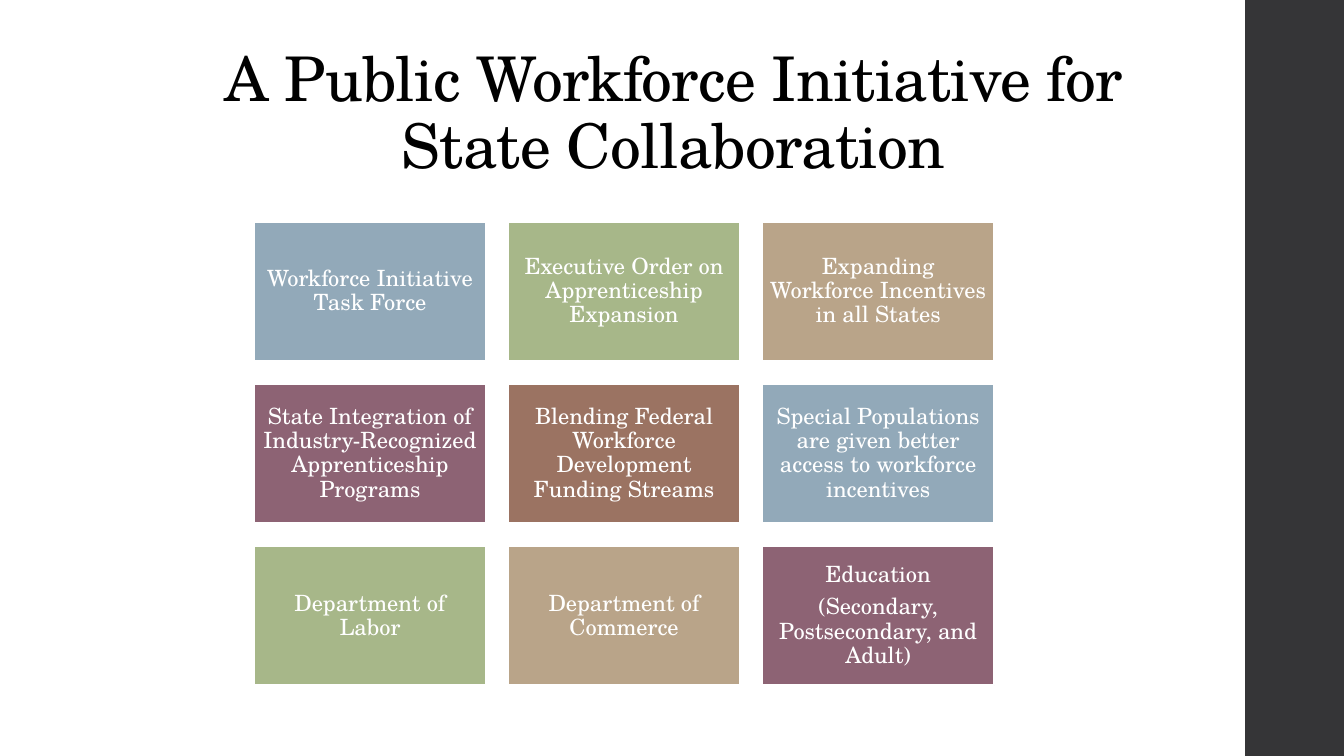
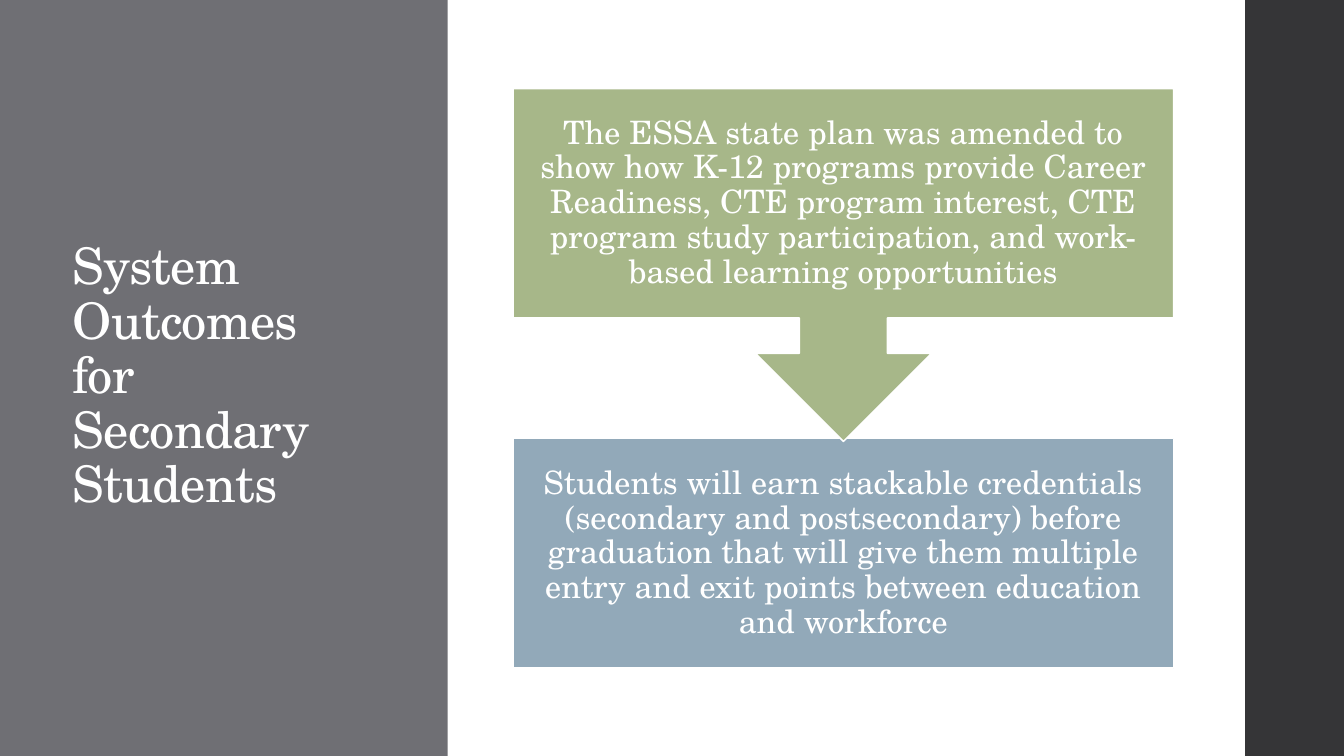
from itertools import cycle

from pptx import Presentation
from pptx.dml.color import RGBColor
from pptx.enum.shapes import MSO_SHAPE as Preset
from pptx.enum.text import MSO_ANCHOR as Anchor, MSO_AUTO_SIZE as AutoSize, PP_ALIGN as Align
from pptx.oxml.ns import qn
from pptx.util import Inches, Pt

FONT = "TeX Gyre Schola"
BLACK = RGBColor(0x00, 0x00, 0x00)
WHITE = RGBColor(0xFF, 0xFF, 0xFF)
CHARCOAL = RGBColor(0x35, 0x35, 0x37)
GRAY = RGBColor(0x6F, 0x6F, 0x74)
BLUE = RGBColor(0x92, 0xA9, 0xB9)
GREEN = RGBColor(0xA7, 0xB7, 0x89)
TAN = RGBColor(0xB9, 0xA4, 0x89)
PLUM = RGBColor(0x8D, 0x63, 0x74)
BROWN = RGBColor(0x9B, 0x73, 0x62)
ACCENTS = (BLUE, GREEN, TAN, PLUM, BROWN)

SLIDE_WIDTH, SLIDE_HEIGHT = 13.33, 7.5
TITLE_ONLY_LAYOUT = 5
GRID_COLUMNS = 3
GRID_LEFT, GRID_TOP = 2.52, 2.2
TILE_WIDTH, TILE_HEIGHT = 2.3, 1.38
COLUMN_STEP, ROW_STEP = 2.52, 1.61

INITIATIVES = (
    "Workforce Initiative Task Force",
    "Executive Order on Apprenticeship Expansion",
    "Expanding Workforce Incentives in all States",
    "State Integration of Industry-Recognized Apprenticeship Programs",
    "Blending Federal Workforce Development Funding Streams",
    "Special Populations are given better access to workforce incentives",
    "Department of Labor",
    "Department of Commerce",
    "Education\n(Secondary, Postsecondary, and Adult)",
)
PLAN = (
    "The ESSA state plan was amended to show how K-12 programs provide Career "
    "Readiness, CTE program interest, CTE program study participation, and "
    "work-based learning opportunities"
)
CREDENTIALS = (
    "Students will earn stackable credentials (secondary and postsecondary) "
    "before graduation that will give them multiple entry and exit points "
    "between education and workforce"
)


def format_text(shape, size, color, align, space_after=0):
    """Apply the shared paragraph style to all text of a shape."""
    for paragraph in shape.text_frame.paragraphs:
        paragraph.alignment = align
        paragraph.line_spacing = 0.9
        paragraph.space_after = Pt(space_after)
        paragraph.font.name = FONT
        paragraph.font.size = Pt(size)
        paragraph.font.color.rgb = color


def add_block(slide, box, fill, preset=Preset.RECTANGLE):
    """Add a flat filled shape without an outline."""
    shape = slide.shapes.add_shape(preset, *map(Inches, box))
    shape.shadow.inherit = False
    shape.fill.solid()
    shape.fill.fore_color.rgb = fill
    shape.line.fill.background()
    return shape


def add_text_block(slide, box, fill, text, size, inset, outline, preset=Preset.RECTANGLE):
    """Add a filled shape with a white outline and centred white text."""
    shape = add_block(slide, box, fill, preset)
    shape.line.color.rgb = WHITE
    shape.line.width = Pt(outline)
    frame = shape.text_frame
    frame.text = text
    frame.word_wrap = True
    frame.vertical_anchor = Anchor.MIDDLE
    frame.margin_left = frame.margin_right = Inches(inset)
    frame.margin_top = frame.margin_bottom = Inches(inset)
    format_text(shape, size, WHITE, Align.CENTER, space_after=0.35 * size)


def set_title(slide, text, box, size, color, align, anchor):
    """Fill, place and style the title placeholder."""
    title = slide.shapes.title
    title.left, title.top, title.width, title.height = map(Inches, box)
    frame = title.text_frame
    frame.text = text
    frame.word_wrap = True
    frame.auto_size = AutoSize.NONE
    frame.vertical_anchor = anchor
    format_text(title, size, color, align)
    for properties in title.element.iter(qn("a:defRPr")):
        properties.set("spc", "-50")


def add_slide(presentation):
    """Add a title slide with the dark band on its right edge."""
    slide = presentation.slides.add_slide(presentation.slide_layouts[TITLE_ONLY_LAYOUT])
    add_block(slide, (12.35, 0, SLIDE_WIDTH - 12.35, SLIDE_HEIGHT), CHARCOAL)
    return slide


def build_initiative_slide(presentation):
    """Build the grid of workforce initiatives."""
    slide = add_slide(presentation)
    set_title(slide, "A Public Workforce Initiative for State Collaboration",
              (1.38, 0.4, 10.6, 1.45), 44, BLACK, Align.CENTER, Anchor.BOTTOM)
    for index, (text, fill) in enumerate(zip(INITIATIVES, cycle(ACCENTS))):
        row, column = divmod(index, GRID_COLUMNS)
        box = (GRID_LEFT + column * COLUMN_STEP, GRID_TOP + row * ROW_STEP,
               TILE_WIDTH, TILE_HEIGHT)
        add_text_block(slide, box, fill, text, size=16, inset=0.07, outline=1.35)


def build_outcome_slide(presentation):
    """Build the two-step flow beside a title panel."""
    slide = add_slide(presentation)
    panel = add_block(slide, (0, 0, 4.44, SLIDE_HEIGHT), GRAY)
    slide.shapes.title.element.addprevious(panel.element)
    set_title(slide, "System Outcomes for Secondary Students",
              (0.62, 0.91, 2.97, 5.67), 36, WHITE, Align.LEFT, Anchor.MIDDLE)
    add_text_block(slide, (5.09, 4.35, 6.55, 2.28), BLUE, CREDENTIALS,
                   size=23, inset=0.18, outline=1.1)
    add_text_block(slide, (5.09, 0.88, 6.55, 3.5), GREEN, PLAN,
                   size=23, inset=0.18, outline=1.1, preset=Preset.DOWN_ARROW_CALLOUT)


def main():
    """Build and save the presentation."""
    presentation = Presentation()
    presentation.slide_width = Inches(SLIDE_WIDTH)
    presentation.slide_height = Inches(SLIDE_HEIGHT)
    build_initiative_slide(presentation)
    build_outcome_slide(presentation)
    presentation.save("out.pptx")


if __name__ == "__main__":
    main()
